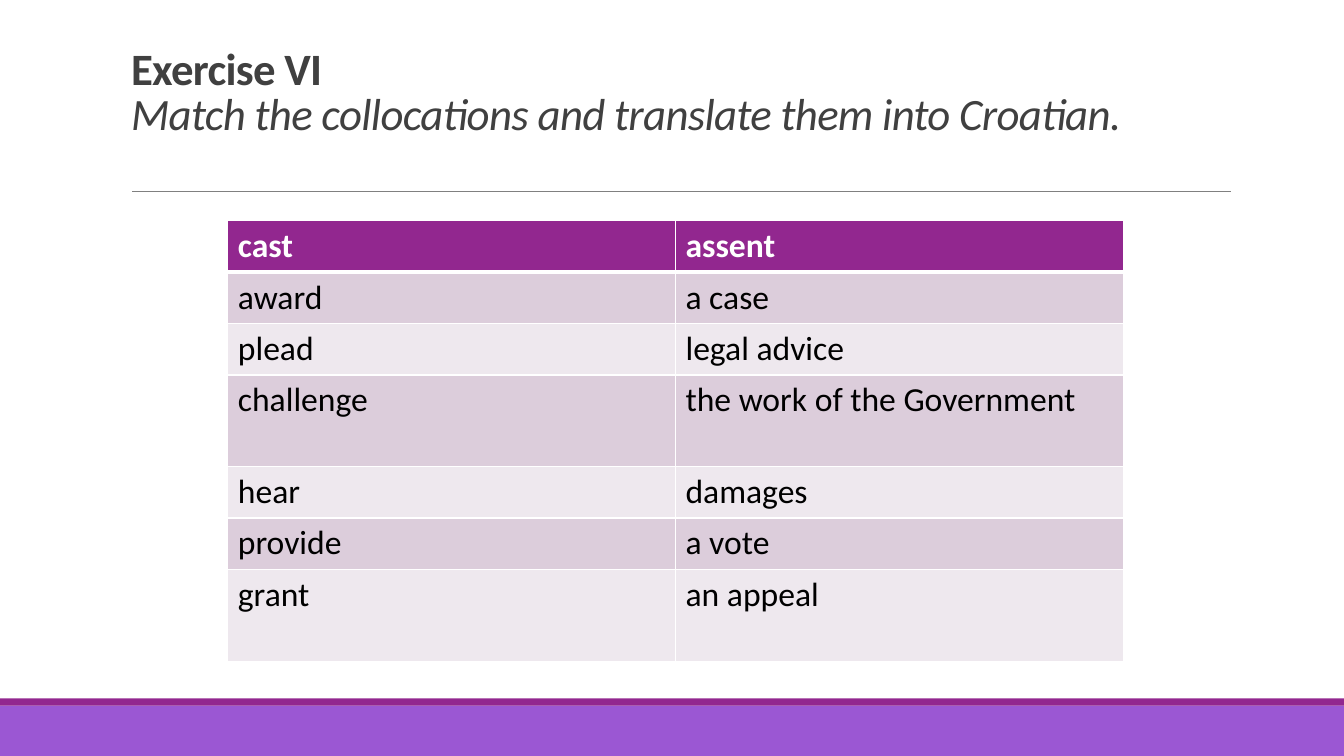
from lxml import etree
from pptx import Presentation
from pptx.dml.color import RGBColor
from pptx.enum.shapes import MSO_CONNECTOR, MSO_SHAPE
from pptx.enum.text import MSO_ANCHOR, MSO_AUTO_SIZE, PP_ALIGN
from pptx.oxml.ns import qn
from pptx.util import Inches, Pt

RECT = MSO_SHAPE.RECTANGLE
STRAIGHT = MSO_CONNECTOR.STRAIGHT
BOTTOM = MSO_ANCHOR.BOTTOM
NO_AUTOFIT = MSO_AUTO_SIZE.NONE
LEFT = PP_ALIGN.LEFT

FONT = "Calibri"
COLORS = {
    "footer": "9B57D3",
    "accent": "92278F",
    "rule": "808080",
    "title": "404040",
    "odd_row": "DCCDDB",
    "even_row": "EEE8EE",
    "white": "FFFFFF",
    "black": "000000",
}
COLLOCATIONS = [
    ("cast", "assent"),
    ("award", "a case"),
    ("plead", "legal advice"),
    ("challenge", "the work of the Government"),
    ("hear", "damages"),
    ("provide", "a vote"),
    ("grant", "an appeal"),
]
ROW_HEIGHT = 0.51
TALL_ROW_HEIGHT = 0.91
TALL_ROWS = ("challenge", "grant")


def rgb(name):
    return RGBColor.from_string(COLORS[name])


def format_run(r, size, color, bold=False, italic=False):
    r.font.name = FONT
    r.font.size = Pt(size)
    r.font.color.rgb = rgb(color)
    r.font.bold = bold
    r.font.italic = italic


def add_band(s, top, height, color):
    sp = s.shapes.add_shape(RECT, 0, Inches(top), Inches(13.33), Inches(height))
    sp.shadow.inherit = False
    sp.fill.solid()
    sp.fill.fore_color.rgb = rgb(color)
    sp.line.fill.background()


def add_rule(s, left, right, y):
    line = s.shapes.add_connector(
        STRAIGHT, Inches(left), Inches(y), Inches(right), Inches(y))
    line.line.color.rgb = rgb("rule")
    line.line.width = Pt(0.5)
    etree.SubElement(line._element.spPr, qn("a:effectLst"))


def set_title(s, heading, instruction):
    sp = s.shapes.title
    sp.left, sp.top = Inches(1.2), Inches(0.31)
    sp.width, sp.height = Inches(11), Inches(1.59)
    tf = sp.text_frame
    tf.word_wrap = True
    tf.auto_size = NO_AUTOFIT
    tf.vertical_anchor = BOTTOM
    tf.margin_bottom = Inches(0.51)
    tf.text = f"{heading}\v{instruction}"
    p = tf.paragraphs[0]
    p.alignment = LEFT
    p.line_spacing = 0.85
    heading_run, instruction_run = p.runs
    format_run(heading_run, 32, "title", bold=True)
    format_run(instruction_run, 32, "title", italic=True)
    for r in p.runs:
        r.font._element.set("spc", "-50")


def set_borders(cell, bottom_width):
    tcPr = cell._tc.get_or_add_tcPr()
    widths = {"a:lnL": 1, "a:lnR": 1, "a:lnT": 1, "a:lnB": bottom_width}
    for i, (tag, width) in enumerate(widths.items()):
        ln = etree.Element(qn(tag), w=str(Pt(width)))
        fill = etree.SubElement(ln, qn("a:solidFill"))
        etree.SubElement(fill, qn("a:srgbClr"), val=COLORS["white"])
        tcPr.insert(i, ln)


def format_cell(cell, text, row):
    header = row == 0
    fill = "accent" if header else "odd_row" if row % 2 else "even_row"
    cell.text = text
    format_run(cell.text_frame.paragraphs[0].runs[0], 24,
               "white" if header else "black", bold=header)
    cell.fill.solid()
    cell.fill.fore_color.rgb = rgb(fill)
    set_borders(cell, 3 if header or row == 0 else 1)


def add_collocations(s, rows):
    heights = [TALL_ROW_HEIGHT if row[0] in TALL_ROWS else ROW_HEIGHT
               for row in rows]
    table = s.shapes.add_table(
        len(rows), 2, Inches(2.26), Inches(2.19),
        Inches(8.88), Inches(sum(heights))).table
    for i, (row, height) in enumerate(zip(rows, heights)):
        table.rows[i].height = Inches(height)
        for j, text in enumerate(row):
            format_cell(table.cell(i, j), text, i)


def main():
    prs = Presentation()
    prs.slide_width, prs.slide_height = Inches(13.33), Inches(7.5)
    s = prs.slides.add_slide(prs.slide_layouts[5])
    add_band(s, 7, 0.5, "footer")
    add_band(s, 6.93, 0.07, "accent")
    add_rule(s, 1.31, 12.21, 1.9)
    set_title(s, "Exercise VI",
              "Match the collocations and translate them into Croatian.")
    add_collocations(s, COLLOCATIONS)
    prs.save("out.pptx")


if __name__ == "__main__":
    main()
